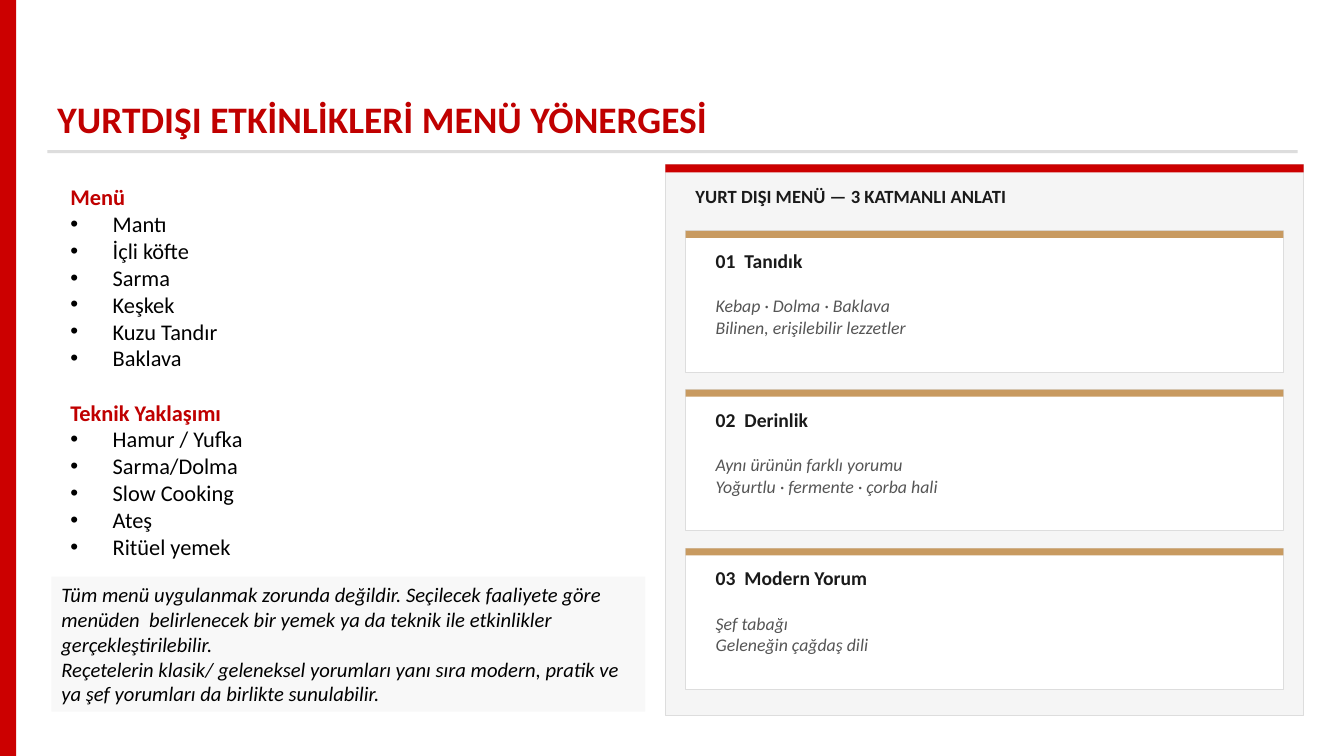
import pptx
import pptx.util
import pptx.dml.color
import pptx.enum.shapes
import pptx.enum.text
import pptx.oxml.ns
import lxml.etree

TITLE = "YURTDIŞI ETKİNLİKLERİ MENÜ YÖNERGESİ"
LISTS = [
    ("Menü", ["Mantı", "İçli köfte", "Sarma", "Keşkek", "Kuzu Tandır", "Baklava"]),
    ("Teknik Yaklaşımı", ["Hamur / Yufka", "Sarma/Dolma", "Slow Cooking", "Ateş", "Ritüel yemek"]),
]
NOTE = (
    "Tüm menü uygulanmak zorunda değildir. Seçilecek faaliyete göre menüden  "
    "belirlenecek bir yemek ya da teknik ile etkinlikler gerçekleştirilebilir.\n"
    "Reçetelerin klasik/ geleneksel yorumları yanı sıra modern, pratik ve "
    "ya şef yorumları da birlikte sunulabilir."
)
PANEL = "YURT DIŞI MENÜ — 3 KATMANLI ANLATI"
CARDS = [
    ("01  Tanıdık", "Kebap · Dolma · Baklava\nBilinen, erişilebilir lezzetler"),
    ("02  Derinlik", "Aynı ürünün farklı yorumu\nYoğurtlu · fermente · çorba hali"),
    ("03  Modern Yorum", "Şef tabağı\nGeleneğin çağdaş dili"),
]
RED, DEEP, GOLD = "CC0000", "C00000", "C89A60"
INK, GREY, RULE, PALE = "1A1A1A", "555555", "DDDDDD", "F5F5F5"

WIDE, HIGH = 13.33, 7.5
LEFT, SPAN = 0.47, 12.4
SIDE, TOP, BROAD, TALL = 6.6, 1.63, 6.33, 5.47
PAD = 0.2
FIRST, CARD, GAP = 2.29, 1.4, 0.175

Inch, Pt = pptx.util.Inches, pptx.util.Pt
qn = pptx.oxml.ns.qn

prs = pptx.Presentation()
prs.slide_width, prs.slide_height = Inch(WIDE), Inch(HIGH)
slide = prs.slides.add_slide(prs.slide_layouts[5])


def hue(code):
    return pptx.dml.color.RGBColor.from_string(code)


def rect(x, y, w, h, fill, line=None):
    box = slide.shapes.add_shape(
        pptx.enum.shapes.MSO_SHAPE.RECTANGLE, Inch(x), Inch(y), Inch(w), Inch(h))
    box.shadow.inherit = False
    box.fill.solid()
    box.fill.fore_color.rgb = hue(fill)
    if line:
        box.line.color.rgb = hue(line)
        box.line.width = Pt(0.5)
    else:
        box.line.fill.background()
    return box


def style(para, size, code, bold=False, slant=False):
    para.alignment = pptx.enum.text.PP_ALIGN.LEFT
    for run in para.runs:
        font = run.font
        font.name, font.size = "Calibri", Pt(size)
        font.bold, font.italic = bold, slant
        font.color.rgb = hue(code)


def write(box, text, size, code, bold=False, slant=False):
    frame = box.text_frame
    frame.text = text
    frame.word_wrap = True
    for para in frame.paragraphs:
        style(para, size, code, bold, slant)


def label(x, y, w, h, *look):
    box = slide.shapes.add_textbox(Inch(x), Inch(y), Inch(w), Inch(h))
    write(box, *look)


def bullet(para):
    props = para._p.get_or_add_pPr()
    props.set("marL", str(Inch(0.42)))
    props.set("indent", str(-Inch(0.42)))
    lxml.etree.SubElement(props, qn("a:buFont")).set("typeface", "Arial")
    lxml.etree.SubElement(props, qn("a:buChar")).set("char", "•")


rect(0, 0, 0.16, HIGH, RED)
title = slide.shapes.title
title.left, title.top, title.width, title.height = map(Inch, (LEFT, 0.9, SPAN, 0.55))
write(title, TITLE, 26.7, DEEP, True)
title.text_frame.auto_size = pptx.enum.text.MSO_AUTO_SIZE.NONE
title.text_frame.vertical_anchor = pptx.enum.text.MSO_ANCHOR.TOP
rect(LEFT, 1.49, SPAN, 0.03, RULE)

rect(SIDE, TOP, BROAD, TALL, PALE, RULE)
rect(SIDE, TOP, BROAD, 0.08, RED)
x, w = SIDE + PAD, BROAD - 2 * PAD
label(x, 1.79, w, 0.33, PANEL, 13.3, INK, True)
for i, (head, body) in enumerate(CARDS):
    y = FIRST + i * (CARD + GAP)
    rect(x, y, w, CARD, "FFFFFF", RULE)
    rect(x, y, w, 0.07, GOLD)
    label(x + PAD, y + 0.13, w - 2 * PAD, 0.34, head, 14, INK, True)
    label(x + PAD, y + 0.59, w - 2 * PAD, 0.53, body, 12.7, GREY, False, True)

note = rect(0.51, 5.72, 5.89, 1.34, "E7E6E6")
tint = note.fill._xPr.find(qn("a:solidFill"))[0]
lxml.etree.SubElement(tint, qn("a:alpha")).set("val", "28000")
write(note, NOTE, 14.7, "000000", False, True)

menu = slide.shapes.add_textbox(Inch(0.6), Inch(1.77), Inch(6.67), Inch(3.87))
frame = menu.text_frame
frame.word_wrap = True
for i, (head, items) in enumerate(LISTS):
    para = frame.add_paragraph() if i else frame.paragraphs[0]
    para.text = head
    if i:
        para.space_before = Pt(19.5)
    style(para, 16, DEEP, True)
    for item in items:
        para = frame.add_paragraph()
        para.text = item
        bullet(para)
        style(para, 16, "000000")

prs.save("out.pptx")
